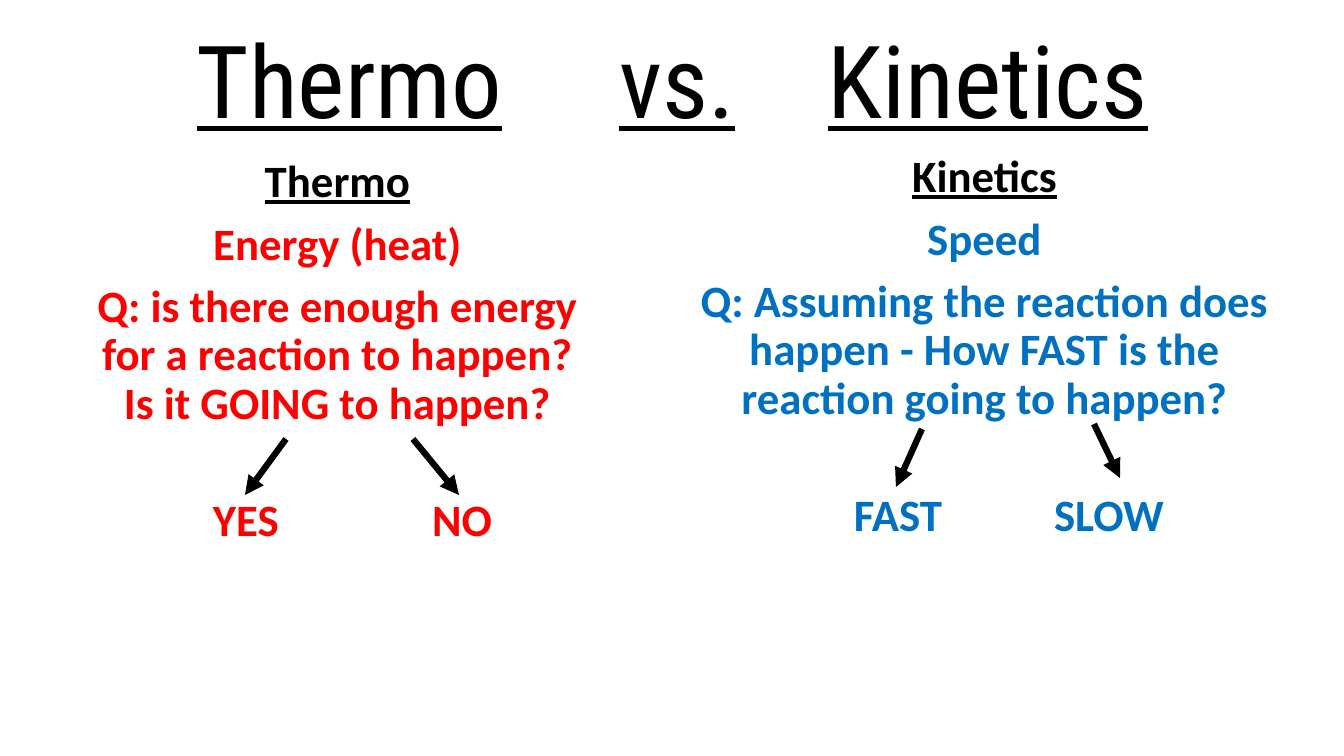
from lxml.etree import SubElement
from pptx import Presentation
from pptx.dml.color import RGBColor
from pptx.enum.shapes import MSO_CONNECTOR
from pptx.enum.text import MSO_ANCHOR, MSO_AUTO_SIZE, PP_ALIGN
from pptx.oxml.ns import qn
from pptx.util import Pt

TITLE = "Thermo\tvs.\tKinetics"
TITLE_BOX = (93, 13, 1159, 146)
TITLE_INDENT = 104
TITLE_TABS = (422, 631)
BLACK = "000000"

# Answers: label, centre of the label, arrow start, arrow end
COLUMNS = [
    {
        "box": (82, 154, 511, 480),
        "color": "FF0000",
        "heading": "Thermo",
        "lines": [
            "Energy (heat)",
            "Q: is there enough energy for a reaction to happen? "
            "Is it GOING to happen?",
        ],
        "answers": [
            ("YES", 246, (286, 439), (245, 495)),
            ("NO", 462, (413, 439), (459, 495)),
        ],
    },
    {
        "box": (677, 149, 615, 480),
        "color": "0070C0",
        "heading": "Kinetics",
        "lines": [
            "Speed",
            "Q: Assuming the reaction does happen - How FAST is the "
            "reaction going to happen?",
        ],
        "answers": [
            ("FAST", 898, (922, 429), (896, 487)),
            ("SLOW", 1109, (1094, 424), (1120, 478)),
        ],
    },
]
ANSWER_DROP = 340
ANSWER_SIZE = (140, 56)


def px(length):
    return round(length * 914400 / 100.8)


def rgb(color):
    return RGBColor.from_string(color)


def format_paragraph(para, size, font, color, bold=False, underline=False):
    para.line_spacing = 0.9
    for span in para.runs:
        span.font.size = Pt(size)
        span.font.name = font
        span.font.bold = bold
        span.font.underline = underline
        span.font.color.rgb = rgb(color)


def add_text(page, bounds, lines, color, heading=False):
    """Add centred bold lines; a heading makes the first one black and underlined."""
    box = page.shapes.add_textbox(*map(px, bounds))
    frame = box.text_frame
    frame.word_wrap = True
    frame.text = "\n".join(lines)
    for index, para in enumerate(frame.paragraphs):
        is_heading = heading and index == 0
        para.alignment = PP_ALIGN.CENTER
        para.space_before = Pt(10)
        format_paragraph(para, 32, "Calibri", BLACK if is_heading else color,
                         bold=True, underline=is_heading)
    return frame


def add_arrow(page, start, end):
    arrow = page.shapes.add_connector(
        MSO_CONNECTOR.STRAIGHT, *map(px, start + end))
    arrow.line.color.rgb = rgb(BLACK)
    arrow.line.width = Pt(4.5)
    SubElement(arrow.line._get_or_add_ln(), qn("a:tailEnd"), type="triangle")
    SubElement(arrow._element.spPr, qn("a:effectLst"))


def add_title(page):
    title = page.shapes.title
    title.left, title.top, title.width, title.height = map(px, TITLE_BOX)
    frame = title.text_frame
    frame.text = TITLE
    frame.auto_size = MSO_AUTO_SIZE.NONE
    frame.vertical_anchor = MSO_ANCHOR.MIDDLE
    frame.margin_left = px(TITLE_INDENT)
    para = frame.paragraphs[0]
    para.alignment = PP_ALIGN.LEFT
    format_paragraph(para, 72, "Roboto Condensed", BLACK, underline=True)
    tabs = SubElement(para._p.get_or_add_pPr(), qn("a:tabLst"))
    for position in TITLE_TABS:
        SubElement(tabs, qn("a:tab"), pos=str(px(position)), algn="l")


def add_column(page, column):
    add_text(page, column["box"], [column["heading"], *column["lines"]],
             column["color"], heading=True)
    width, height = ANSWER_SIZE
    top = column["box"][1] + ANSWER_DROP
    for label, center, start, end in column["answers"]:
        frame = add_text(page, (center - width // 2, top, width, height),
                         [label], column["color"])
        frame.vertical_anchor = MSO_ANCHOR.MIDDLE
        add_arrow(page, start, end)


def main():
    deck = Presentation()
    deck.slide_width, deck.slide_height = px(1344), px(756)
    page = deck.slides.add_slide(deck.slide_layouts[5])
    add_title(page)
    for column in COLUMNS:
        add_column(page, column)
    deck.save("out.pptx")


if __name__ == "__main__":
    main()
